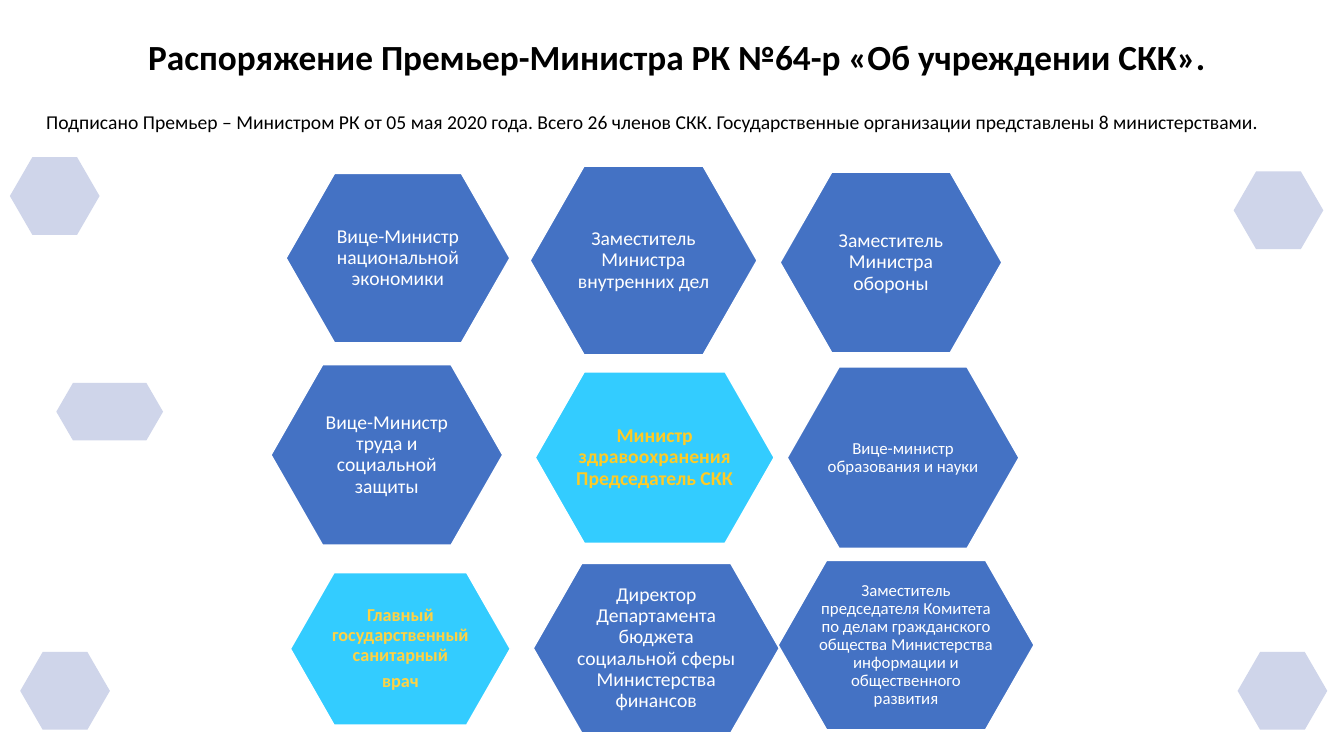
from lxml import etree
from pptx import Presentation
from pptx.dml.color import RGBColor
from pptx.enum.shapes import MSO_SHAPE
from pptx.enum.text import MSO_ANCHOR, MSO_AUTO_SIZE, PP_ALIGN
from pptx.oxml.ns import qn
from pptx.util import Cm, Pt

HEXAGON = MSO_SHAPE.HEXAGON
MIDDLE, TOP = MSO_ANCHOR.MIDDLE, MSO_ANCHOR.TOP
CENTER, LEFT = PP_ALIGN.CENTER, PP_ALIGN.LEFT
NO_FIT = MSO_AUTO_SIZE.NONE

BLACK = RGBColor(0x00, 0x00, 0x00)
WHITE = RGBColor(0xFF, 0xFF, 0xFF)
BLUE = RGBColor(0x44, 0x72, 0xC4)
CYAN = RGBColor(0x33, 0xCC, 0xFF)
PALE = RGBColor(0xCF, 0xD5, 0xEA)
GOLD = RGBColor(0xFF, 0xCB, 0x25)
LIGHT_GOLD = RGBColor(0xFF, 0xD2, 0x43)


def write(frame, text, size, color, bold, align, anchor):
    frame.text = text
    frame.word_wrap = True
    frame.auto_size = NO_FIT
    frame.vertical_anchor = anchor
    for paragraph in frame.paragraphs:
        paragraph.alignment = align
        paragraph.line_spacing = 0.9
        for run in paragraph.runs:
            run.font.name = "Calibri"
            run.font.size = Pt(size)
            run.font.bold = bold
            run.font.color.rgb = color


def add_hexagon(left, top, width, height, fill, adjustment):
    hexagon = slide.shapes.add_shape(HEXAGON, Cm(left), Cm(top), Cm(width), Cm(height))
    hexagon.adjustments[0] = adjustment
    hexagon.shadow.inherit = False
    hexagon.fill.solid()
    hexagon.fill.fore_color.rgb = fill
    hexagon.line.fill.background()
    return hexagon


prs = Presentation()
prs.slide_width, prs.slide_height = Cm(33.87), Cm(19.05)
slide = prs.slides.add_slide(prs.slide_layouts[1])

title = slide.shapes.title
title.left, title.top, title.width, title.height = Cm(1.14), Cm(1.02), Cm(31.85), Cm(0.94)
write(title.text_frame, "Распоряжение Премьер-Министра РК №64-р «Об учреждении СКК».",
      25.2, BLACK, True, CENTER, MIDDLE)

summary = slide.placeholders[1]
summary.left, summary.top, summary.width, summary.height = Cm(0.91), Cm(2.72), Cm(31.85), Cm(15.9)
write(summary.text_frame,
      "Подписано Премьер – Министром РК от 05 мая 2020 года. Всего 26 членов СКК. "
      "Государственные организации представлены 8 министерствами.",
      14, BLACK, False, LEFT, TOP)
summary_line = summary.text_frame.paragraphs[0]
summary_line.space_before = Pt(10)
properties = summary_line._p.get_or_add_pPr()
properties.set("marL", "0")
properties.set("indent", "0")
etree.SubElement(properties, qn("a:buNone"))

accents = [
    (0.25, 3.96, 2.26, 1.96),
    (31.09, 4.32, 2.26, 1.96),
    (0.51, 16.43, 2.26, 1.96),
    (31.19, 16.43, 2.26, 1.96),
    (1.42, 9.65, 2.69, 1.45),
]
for box in accents:
    add_hexagon(*box, PALE, 0.289)

members = [
    ("Министр здравоохранения Председатель СКК",
     (13.49, 9.37, 6.02, 4.32), CYAN, 14, GOLD),
    ("Заместитель Министра внутренних дел",
     (13.36, 4.19, 5.72, 4.75), BLUE, 14, WHITE),
    ("Заместитель Министра обороны",
     (19.66, 4.34, 5.59, 4.55), BLUE, 14, WHITE),
    ("Заместитель председателя Комитета по делам гражданского общества "
     "Министерства информации и общественного развития",
     (19.61, 14.12, 6.45, 4.27), BLUE, 12, WHITE),
    ("Директор Департамента бюджета социальной сферы Министерства финансов",
     (13.44, 14.2, 6.2, 4.27), BLUE, 14, WHITE),
    ("Вице-Министр труда и социальной защиты",
     (6.83, 9.19, 5.84, 4.55), BLUE, 14, WHITE),
    ("Вице-Министр национальной экономики",
     (7.21, 4.37, 5.64, 4.27), BLUE, 14, WHITE),
    ("Вице-министр образования и науки",
     (19.84, 9.25, 5.84, 4.57), BLUE, 12, WHITE),
    ("Главный государственный санитарный\nврач",
     (7.32, 14.43, 5.54, 3.84), CYAN, 13, LIGHT_GOLD),
]
for position, box, fill, size, color in members:
    member = add_hexagon(*box, fill, 0.286)
    member.line.color.rgb = WHITE
    member.line.width = Pt(1)
    frame = member.text_frame
    frame.margin_left = frame.margin_right = Cm(0.05)
    frame.margin_top = frame.margin_bottom = Cm(0.05)
    write(frame, position, size, color, fill == CYAN, CENTER, MIDDLE)
    for paragraph in frame.paragraphs:
        paragraph.space_after = Pt(round(size * 0.35))

prs.save("out.pptx")
